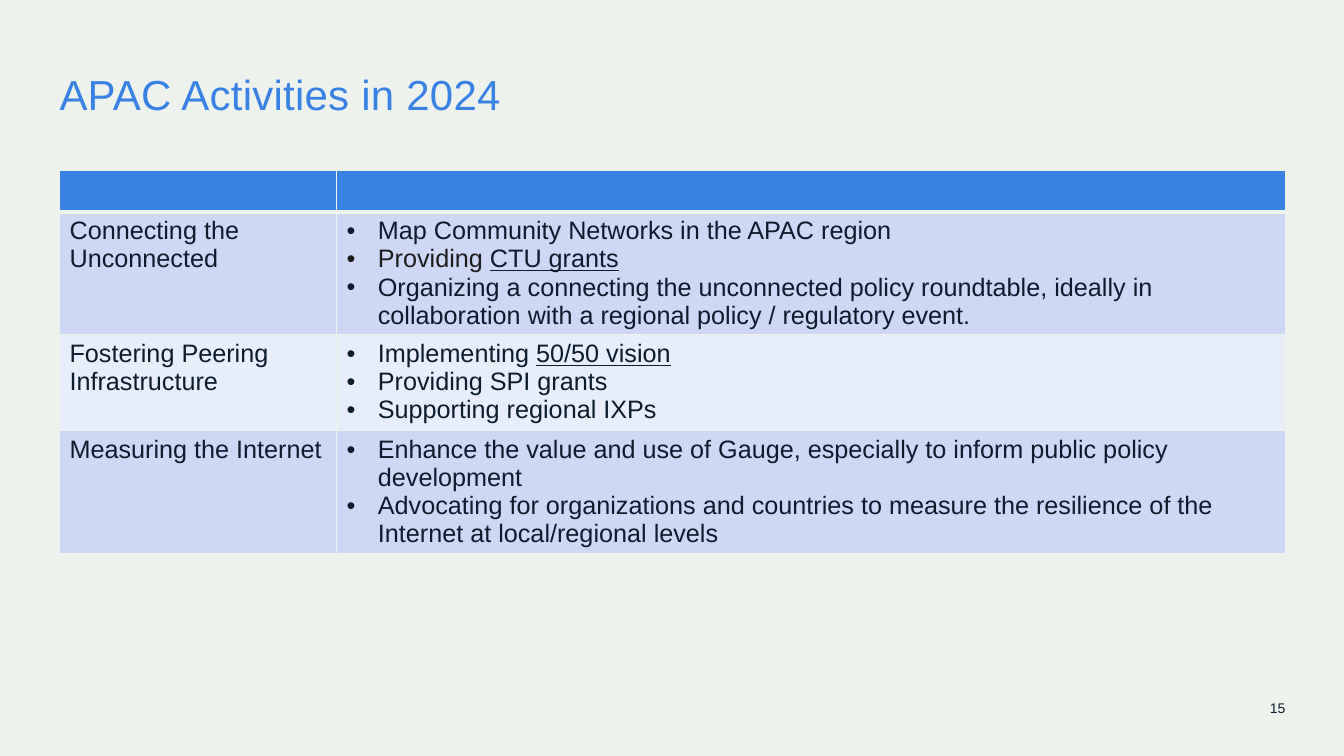
from lxml import etree
from pptx import Presentation
from pptx import util as u
from pptx.dml.color import RGBColor
from pptx.enum import text
from pptx.oxml import ns

WIDTH, HEIGHT = u.Inches(13.33), u.Inches(7.5)
MARGIN = u.Inches(0.59)
CONTENT_WIDTH = u.Inches(12.16)
LABEL_SHARE = 0.226
ROW_HEIGHTS = (0.41, 1.21, 0.95, 1.21)
FONT = "Arial"
PAPER, BLUE, INK, SOFT_INK = "EEF2EC", "3982E3", "0C1C2C", "1D1C1D"
BANDS = ("CED8F4", "E8EDFA")

# Each bullet is a list of (words, colour, underlined) spans.
ACTIVITIES = [
    ("Connecting the Unconnected", [
        [("Map Community Networks in the APAC region", INK, False)],
        [("Providing ", SOFT_INK, False), ("CTU grants", INK, True)],
        [("Organizing a connecting the unconnected policy roundtable, ideally in "
          "collaboration with a regional policy / regulatory event.", INK, False)],
    ]),
    ("Fostering Peering Infrastructure", [
        [("Implementing ", INK, False), ("50/50 vision", INK, True)],
        [("Providing SPI grants", INK, False)],
        [("Supporting regional IXPs", INK, False)],
    ]),
    ("Measuring the Internet", [
        [("Enhance the value and use of Gauge, especially to inform public policy "
          "development", INK, False)],
        [("Advocating for organizations and countries to measure the resilience of "
          "the Internet at local/regional levels", INK, False)],
    ]),
]


def colour(value):
    return RGBColor.from_string(value)


def style_span(span, size, value, underlined=False):
    span.font.name = FONT
    span.font.size = u.Pt(size)
    span.font.color.rgb = colour(value)
    if underlined:
        span.font.underline = True


def fill_frame(frame, words, size, value):
    """Put one line of text in a frame without insets."""
    frame.margin_left = frame.margin_right = frame.margin_top = frame.margin_bottom = 0
    frame.word_wrap = True
    frame.auto_size = text.MSO_AUTO_SIZE.NONE
    frame.text = words
    style_span(frame.paragraphs[0].runs[0], size, value)
    return frame.paragraphs[0]


def add_title(page, words):
    title = page.shapes.title
    title.left, title.top = MARGIN, u.Inches(0.62)
    title.width, title.height = CONTENT_WIDTH, u.Inches(0.59)
    para = fill_frame(title.text_frame, words, 30, BLUE)
    title.text_frame.vertical_anchor = text.MSO_ANCHOR.MIDDLE
    para.alignment = text.PP_ALIGN.LEFT
    para.line_spacing = 1.06
    para.runs[0].font._element.set("spc", "20")


def add_page_number(page, number):
    width = u.Inches(3)
    box = page.shapes.add_textbox(MARGIN + CONTENT_WIDTH - width, u.Inches(6.94),
                                  width, u.Inches(0.19))
    para = fill_frame(box.text_frame, number, 10, INK)
    para.alignment = text.PP_ALIGN.RIGHT


def paint_cell(cell, fill, bottom=1, top=1):
    """Set the four borders, in points, and then the fill."""
    properties = cell._tc.get_or_add_tcPr()
    for side, points in (("L", 1), ("R", 1), ("T", top), ("B", bottom)):
        line = etree.SubElement(properties, ns.qn("a:ln" + side), w=str(u.Pt(points)))
        solid = etree.SubElement(line, ns.qn("a:solidFill"))
        etree.SubElement(solid, ns.qn("a:srgbClr"), val=PAPER)
    cell.fill.solid()
    cell.fill.fore_color.rgb = colour(fill)


def add_bullet(para):
    properties = para._p.get_or_add_pPr()
    indent = u.Inches(0.31)
    properties.set("marL", str(indent))
    properties.set("indent", str(-indent))
    etree.SubElement(properties, ns.qn("a:buFont"), typeface=FONT)
    etree.SubElement(properties, ns.qn("a:buChar"), char="•")


def write_bullets(frame, bullets):
    for index, spans in enumerate(bullets):
        para = frame.add_paragraph() if index else frame.paragraphs[0]
        add_bullet(para)
        for words, value, underlined in spans:
            span = para.add_run()
            span.text = words
            style_span(span, 18, value, underlined)


def add_activity_table(page):
    frame = page.shapes.add_table(len(ROW_HEIGHTS), 2, MARGIN, u.Inches(1.69),
                                  CONTENT_WIDTH, u.Inches(sum(ROW_HEIGHTS)))
    table = frame.table
    table.first_row = table.horz_banding = False
    table.columns[0].width = round(CONTENT_WIDTH * LABEL_SHARE)
    table.columns[1].width = CONTENT_WIDTH - table.columns[0].width
    for row, height in zip(table.rows, ROW_HEIGHTS):
        row.height = u.Inches(height)

    for cell in table.rows[0].cells:
        paint_cell(cell, BLUE, bottom=3)
    for index, (label, bullets) in enumerate(ACTIVITIES):
        label_cell, detail_cell = table.rows[index + 1].cells
        for cell in (label_cell, detail_cell):
            paint_cell(cell, BANDS[index % 2], top=1 if index else 3)
        label_cell.text_frame.text = label
        style_span(label_cell.text_frame.paragraphs[0].runs[0], 18, INK)
        write_bullets(detail_cell.text_frame, bullets)


def main():
    deck = Presentation()
    deck.slide_width, deck.slide_height = WIDTH, HEIGHT
    page = deck.slides.add_slide(deck.slide_layouts.get_by_name("Title Only"))
    page.background.fill.solid()
    page.background.fill.fore_color.rgb = colour(PAPER)
    add_title(page, "APAC Activities in 2024")
    add_activity_table(page)
    add_page_number(page, "15")
    deck.save("out.pptx")


if __name__ == "__main__":
    main()
